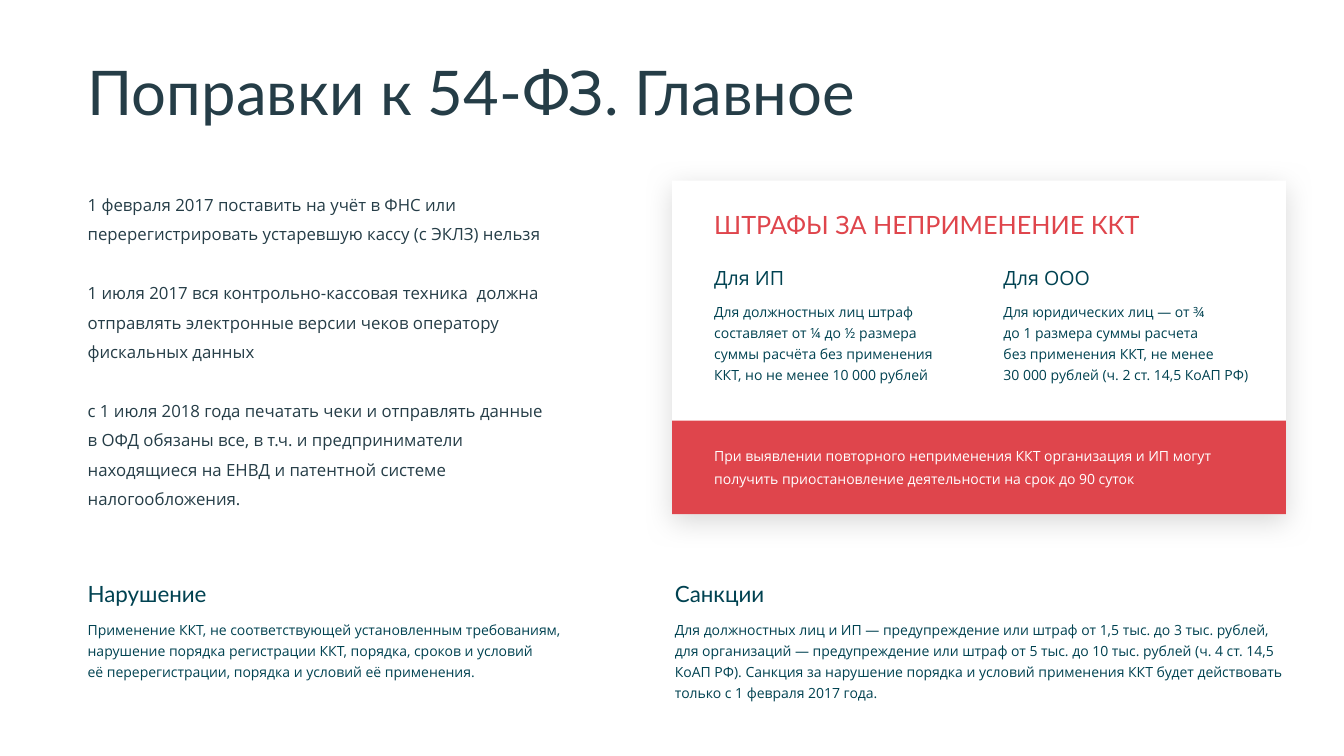
from lxml import etree
from pptx import Presentation
from pptx.dml.color import RGBColor
from pptx.enum.shapes import MSO_SHAPE
from pptx.enum.text import MSO_ANCHOR, MSO_AUTO_SIZE
from pptx.oxml.ns import qn
from pptx.util import Cm, Pt

RECT = MSO_SHAPE.RECTANGLE
TOP = MSO_ANCHOR.TOP
GROW, FIXED = MSO_AUTO_SIZE.SHAPE_TO_FIT_TEXT, MSO_AUTO_SIZE.NONE

INK, TEAL, RED, WHITE, GREY = "253D47", "004251", "DF454C", "FFFFFF", "D9D9D9"

STYLES = {
    "title": dict(name="Lato", size=44, color=INK, line=0.9, fit=FIXED),
    "lead": dict(name="Open Sans", size=12, color=INK, line=Pt(21), gap=21),
    "card_title": dict(name="Lato", size=18, color=RED),
    "card_head": dict(name="Open Sans", size=14, color=TEAL),
    "head": dict(name="Lato", size=16, color=TEAL),
    "body": dict(name="Open Sans", size=10, color=TEAL, line=Pt(15)),
    "warning": dict(name="Open Sans", size=10, color=WHITE, line=Pt(16)),
}

TITLE = ["Поправки к 54-ФЗ. Главное"]
DATES = [
    "1 февраля 2017 поставить на учёт в ФНС или перерегистрировать устаревшую кассу (с ЭКЛЗ) нельзя",
    "1 июля 2017 вся контрольно-кассовая техника  должна отправлять электронные версии чеков "
    "оператору фискальных данных",
    "с 1 июля 2018 года печатать чеки и отправлять данные\vв ОФД обязаны все, в т.ч. и "
    "предприниматели находящиеся на ЕНВД и патентной системе налогообложения.",
]
CARD_TITLE = ["ШТРАФЫ ЗА НЕПРИМЕНЕНИЕ ККТ"]
WARNING = [
    "При выявлении повторного неприменения ККТ организация и ИП могут получить "
    "приостановление деятельности на срок до 90 суток",
]
FINES = [
    ("Для ИП", 17.75, 6.58, [
        "Для должностных лиц штраф составляет от ¼ до ½ размера суммы расчёта без применения "
        "ККТ, но не менее 10 000 рублей",
    ]),
    ("Для ООО", 25.04, 7.16, [
        "Для юридических лиц — от ¾",
        "до 1 размера суммы расчета",
        "без применения ККТ, не менее",
        "30 000 рублей (ч. 2 ст. 14,5 КоАП РФ)",
    ]),
]
RULES = [
    ("Нарушение", 1.96, 13.61, 1.85, [
        "Применение ККТ, не соответствующей установленным требованиям, нарушение порядка "
        "регистрации ККТ, порядка, сроков и условий",
        "её перерегистрации, порядка и условий её применения.",
    ]),
    ("Санкции", 16.76, 16.41, 2.39, [
        "Для должностных лиц и ИП — предупреждение или штраф от 1,5 тыс. до 3 тыс. рублей,",
        "для организаций — предупреждение или штраф от 5 тыс. до 10 тыс. рублей (ч. 4 ст. 14,5 "
        "КоАП РФ). Санкция за нарушение порядка и условий применения ККТ будет действовать "
        "только с 1 февраля 2017 года.",
    ]),
]

LEFT, CARD_LEFT, CARD_TEXT_LEFT = 1.96, 16.94, 17.75
CARD_TOP, CARD_WIDTH, CARD_HEIGHT = 4.55, 15.47, 8.41
BAND_HEIGHT = 2.36
HEAD_WIDTH = 6.58


def rgb(value):
    return RGBColor.from_string(value)


def add_panel(s, left, top, width, height, color):
    sp = s.shapes.add_shape(RECT, Cm(left), Cm(top), Cm(width), Cm(height))
    sp.shadow.inherit = False
    sp.fill.solid()
    sp.fill.fore_color.rgb = rgb(color)
    sp.line.fill.background()
    return sp


def add_soft_shadow(sp, color, blur, distance):
    effects = sp._element.spPr.find(qn("a:effectLst"))
    shadow = etree.SubElement(effects, qn("a:outerShdw"), blurRad=str(Pt(blur)),
                              dist=str(Pt(distance)), dir="5400000", rotWithShape="0")
    etree.SubElement(shadow, qn("a:srgbClr"), val=color)


def add_text(s, left, top, width, height, paragraphs, style):
    fmt = STYLES[style]
    tf = s.shapes.add_textbox(Cm(left), Cm(top), Cm(width), Cm(height)).text_frame
    frame = dict(word_wrap=True, vertical_anchor=TOP, auto_size=fmt.get("fit", GROW))
    for key, value in frame.items():
        setattr(tf, key, value)
    for i, text in enumerate(paragraphs):
        p = tf.add_paragraph() if i else tf.paragraphs[0]
        p.text = text
        p.line_spacing = fmt.get("line")
        p.space_before = Pt(fmt.get("gap", 0) if i else 0)
        for r in p.runs:
            for key, value in dict(name=fmt["name"], size=Pt(fmt["size"])).items():
                setattr(r.font, key, value)
            r.font.color.rgb = rgb(fmt["color"])


def main():
    prs = Presentation()
    prs.slide_width, prs.slide_height = Cm(33.87), Cm(19.05)
    s = prs.slides.add_slide(prs.slide_layouts[6])

    add_text(s, LEFT, 1.45, 30.12, 2.51, TITLE, "title")
    add_text(s, LEFT, CARD_TOP, 12.37, 8.48, DATES, "lead")

    card = add_panel(s, CARD_LEFT, CARD_TOP, CARD_WIDTH, CARD_HEIGHT, WHITE)
    add_soft_shadow(card, GREY, 20, 5)
    band_top = CARD_TOP + CARD_HEIGHT - BAND_HEIGHT
    add_panel(s, CARD_LEFT, band_top, CARD_WIDTH, BAND_HEIGHT, RED)
    add_text(s, CARD_TEXT_LEFT, 5.16, 13.87, 1.02, CARD_TITLE, "card_title")
    for head, left, width, body in FINES:
        add_text(s, left, 6.58, HEAD_WIDTH, 0.86, [head], "card_head")
        add_text(s, left, 7.42, width, 2.39, body, "body")
    add_text(s, CARD_TEXT_LEFT, 11.02, 14.05, 1.4, WARNING, "warning")

    for head, left, width, height, body in RULES:
        add_text(s, left, 14.5, HEAD_WIDTH, 0.94, [head], "head")
        add_text(s, left, 15.44, width, height, body, "body")

    prs.save("out.pptx")


if __name__ == "__main__":
    main()
